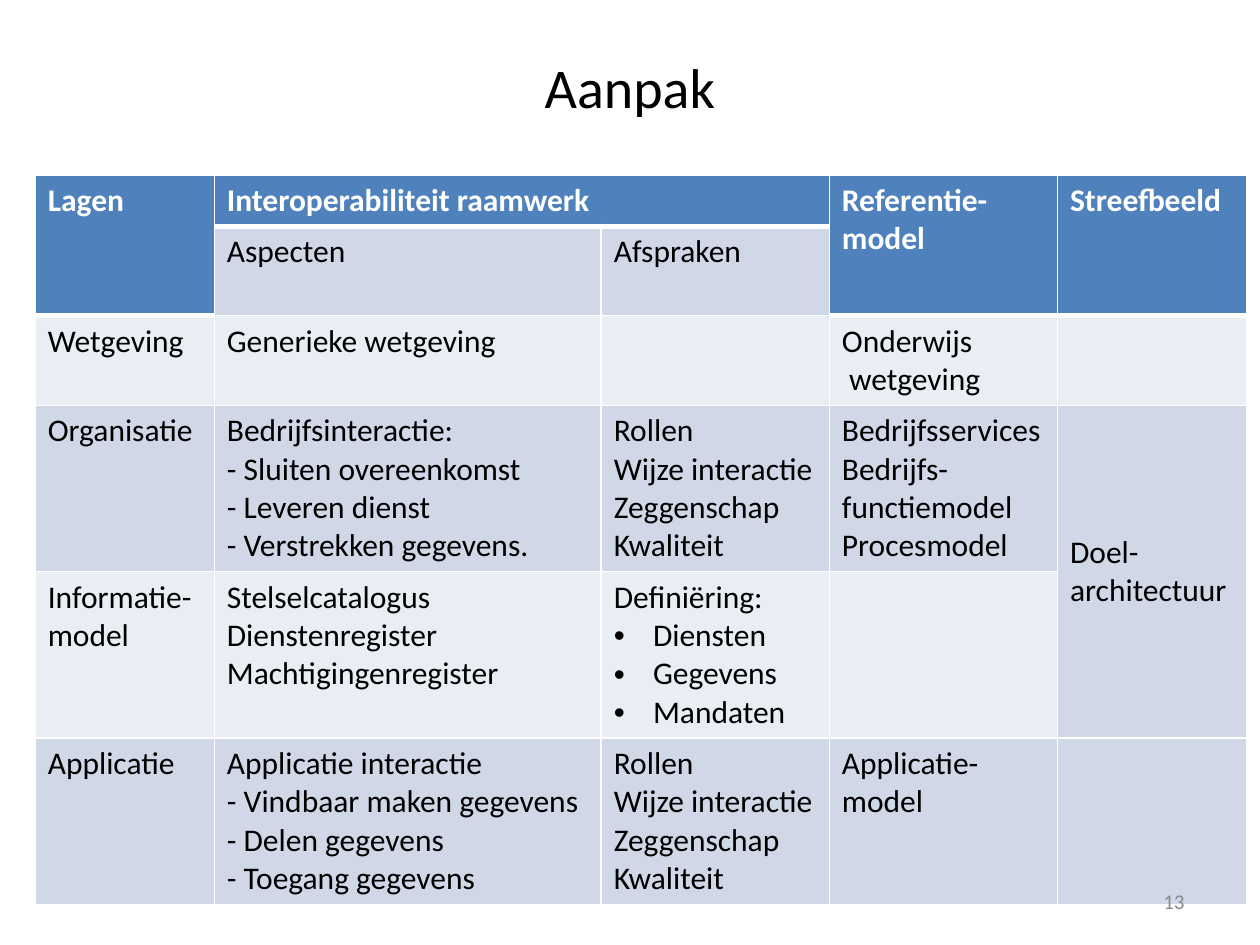
from lxml import etree
from pptx import Presentation
from pptx.dml.color import RGBColor
from pptx.enum import text as t
from pptx.oxml import ns
from pptx.util import Cm, Pt

WHITE = RGBColor(0xFF, 0xFF, 0xFF)
BLACK = RGBColor(0, 0, 0)
GREY = RGBColor(0x89, 0x89, 0x89)
BLUE = RGBColor(0x4F, 0x81, 0xBD)
BANDS = RGBColor(0xE9, 0xED, 0xF4), RGBColor(0xD0, 0xD8, 0xE8)

COLS = 3.61, 7.8, 4.6, 4.6, 3.81
ROWS = 1.02, 1.8, 1.8, 3.35, 3.35, 3.35
MERGES = ((0, 0), (1, 0)), ((0, 1), (0, 2)), ((0, 3), (1, 3)), ((0, 4), (1, 4)), ((3, 4), (4, 4))
HEAD = {(0, col) for col in range(5)} | {(1, 0), (1, 3), (1, 4)}

# \n starts a paragraph, \v breaks a line
CELLS = [
    ["Lagen", "Interoperabiliteit raamwerk", "", "Referentie-model", "Streefbeeld"],
    ["", "Aspecten", "Afspraken", "", ""],
    ["Wetgeving", "Generieke wetgeving", "", "Onderwijs\n wetgeving", ""],
    ["Organisatie",
     "Bedrijfsinteractie:\n- Sluiten overeenkomst\n- Leveren dienst\n- Verstrekken gegevens.",
     "Rollen\nWijze interactie\vZeggenschap\nKwaliteit",
     "Bedrijfsservices\nBedrijfs-\vfunctiemodel\nProcesmodel",
     "Doel-architectuur"],
    ["Informatie-model",
     "Stelselcatalogus\nDienstenregister\nMachtigingenregister",
     "Definiëring:\n•Diensten\n•Gegevens\n•Mandaten", "", ""],
    ["Applicatie",
     "Applicatie interactie\n- Vindbaar maken gegevens\n- Delen gegevens\n- Toegang gegevens",
     "Rollen\vWijze interactie\nZeggenschap\nKwaliteit",
     "Applicatie-model", ""],
]


def style(para, size, color, bold=False):
    for font in [para.font] + [run.font for run in para.runs]:
        font.name, font.size, font.bold = "Calibri", Pt(size), bold
        font.color.rgb = color


def edge(cell, side, width):
    """Draw a white border on one side (L, R, T or B) of a cell."""
    line = etree.SubElement(cell._tc.get_or_add_tcPr(), ns.qn("a:ln" + side), w=str(Pt(width)))
    fill = etree.SubElement(line, ns.qn("a:solidFill"))
    etree.SubElement(fill, ns.qn("a:srgbClr"), val=str(WHITE))


prs = Presentation()
prs.slide_width, prs.slide_height = Cm(25.4), Cm(19.05)
slide = prs.slides.add_slide(prs.slide_layouts[6])

frame = slide.shapes.add_table(6, 5, Cm(0.71), Cm(3.53), Cm(sum(COLS)), Cm(sum(ROWS)))
table = frame.table
for col, width in zip(table.columns, COLS):
    col.width = Cm(width)
for row, height in zip(table.rows, ROWS):
    row.height = Cm(height)
for first, last in MERGES:
    table.cell(*first).merge(table.cell(*last))

for r, row in enumerate(CELLS):
    for c, words in enumerate(row):
        cell = table.cell(r, c)
        head = (r, c) in HEAD
        edge(cell, "L", 1)
        edge(cell, "R", 1)
        edge(cell, "T", 3 if (r - 1, c) in HEAD else 1)
        edge(cell, "B", 3 if head else 1)
        cell.fill.solid()
        cell.fill.fore_color.rgb = BLUE if head else BANDS[r % 2]
        cell.text_frame.text = words
        for para in cell.text_frame.paragraphs:
            if para.text.startswith("•"):
                para.text = para.text[1:]
                props = para._p.get_or_add_pPr()
                props.set("marL", str(Cm(0.79)))
                props.set("indent", str(Cm(-0.79)))
                etree.SubElement(props, ns.qn("a:buFont"), typeface="Arial")
                etree.SubElement(props, ns.qn("a:buChar"), char="•")
            style(para, 18, WHITE if head else BLACK, head)
table.cell(3, 4).vertical_anchor = t.MSO_ANCHOR.MIDDLE

for words, place, size, color, align in (
    ("Aanpak", (1.27, 0.76, 22.86, 1.96), 32, BLACK, t.PP_ALIGN.CENTER),
    ("13", (18.21, 17.65, 5.92, 1.02), 12, GREY, t.PP_ALIGN.RIGHT),
):
    box = slide.shapes.add_textbox(*map(Cm, place)).text_frame
    box.word_wrap = True
    box.vertical_anchor = t.MSO_ANCHOR.MIDDLE
    box.text = words
    box.paragraphs[0].alignment = align
    style(box.paragraphs[0], size, color)

prs.save("out.pptx")
